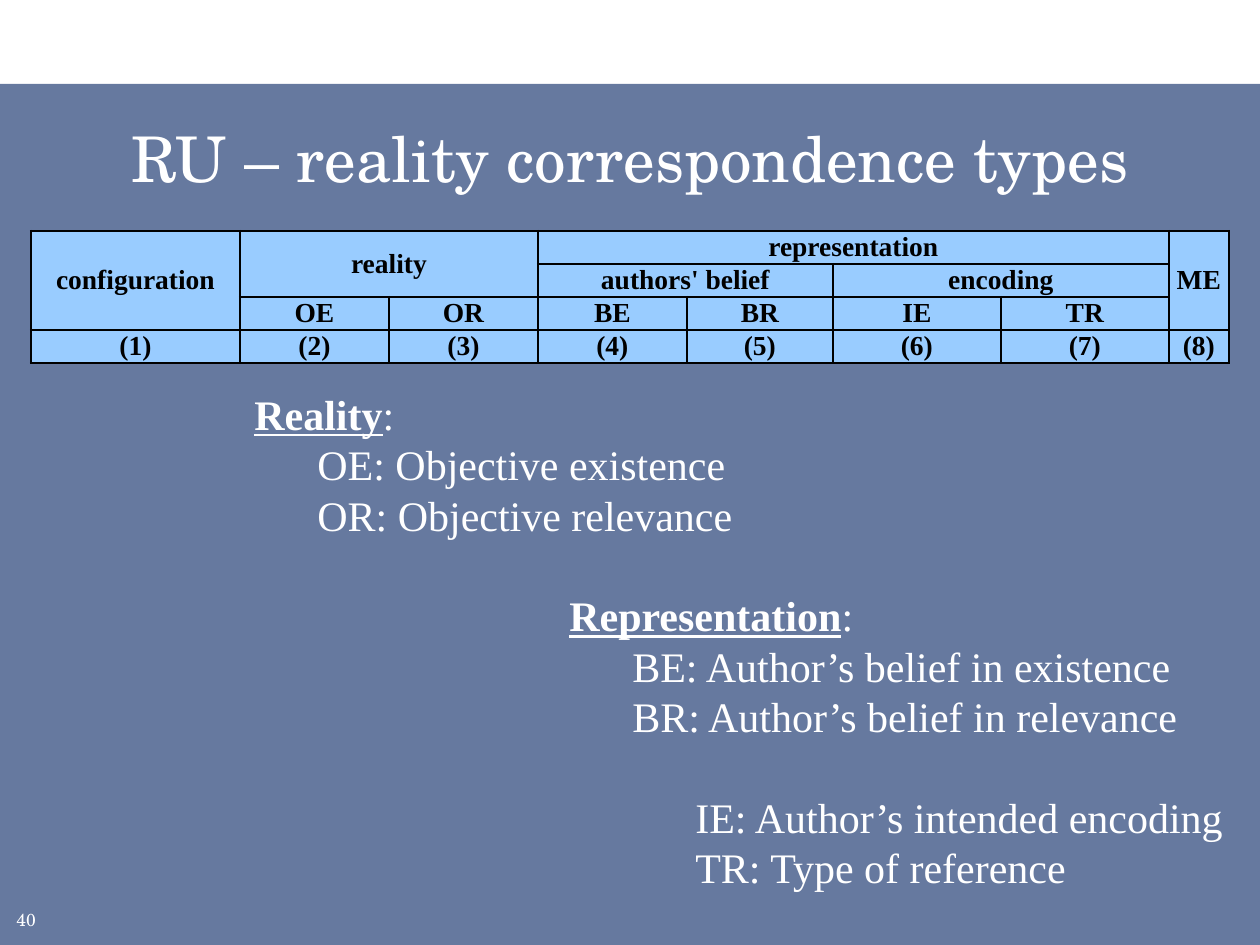
"""Build the slide on RU – reality correspondence types."""
from dataclasses import dataclass

from lxml import etree
from pptx import Presentation
from pptx import util as u
from pptx.dml.color import RGBColor
from pptx.enum import shapes, text
from pptx.oxml.ns import qn


@dataclass(frozen=True)
class Theme:
    navy: RGBColor = RGBColor(0x00, 0x20, 0x60)
    sky: RGBColor = RGBColor(0x99, 0xCC, 0xFF)
    white: RGBColor = RGBColor(0xFF, 0xFF, 0xFF)
    black: RGBColor = RGBColor(0, 0, 0)
    display: str = "TeX Gyre Schola"
    serif: str = "Times New Roman"
    title: float = 36
    body: float = 24
    cell: float = 15.7
    number: float = 10
    leading: float = 28.8


THEME = Theme()


def px(value):
    return u.Emu(round(value * 914400 / 126))


def style(font, name, size, color, bold=False):
    font.name, font.size, font.bold = name, u.Pt(size), bold
    font.color.rgb = color


deck = Presentation()
deck.slide_width, deck.slide_height = px(1260), px(945)
slide = deck.slides.add_slide(deck.slide_layouts[5])

title = slide.shapes.title
title.left, title.top, title.width, title.height = px(31), px(105), px(1198), px(105)
title.text_frame.text = "RU – reality correspondence types"
title.text_frame.vertical_anchor = text.MSO_ANCHOR.MIDDLE
heading = title.text_frame.paragraphs[0]
heading.alignment = text.PP_ALIGN.CENTER
style(heading.runs[0].font, THEME.display, THEME.title, THEME.white)

backdrop = slide.shapes.add_shape(
    shapes.MSO_SHAPE.RECTANGLE, 0, px(84), px(1260), px(861))
backdrop.shadow.inherit = False
backdrop.fill.solid()
backdrop.fill.fore_color.rgb = THEME.navy
backdrop.line.fill.background()
navy = backdrop._element.spPr.find(qn("a:solidFill"))[0]
etree.SubElement(navy, qn("a:alpha"), val="60000")
slide.shapes._spTree.insert(2, backdrop._element)

page = slide.shapes.add_textbox(px(4), px(903), px(59), px(32))
page.text_frame.text = "40"
page.text_frame.word_wrap = True
page.text_frame.vertical_anchor = text.MSO_ANCHOR.MIDDLE
style(page.text_frame.paragraphs[0].runs[0].font,
      THEME.display, THEME.number, THEME.white)

COLUMNS = [209, 149, 149, 149, 146, 168, 168, 60]
ROWS = [
    ["configuration", "reality", "", "representation", "", "", "", "ME"],
    ["", "", "", "authors' belief", "", "encoding", "", ""],
    ["", "OE", "OR", "BE", "BR", "IE", "TR", ""],
    [f"({number})" for number in range(1, 9)],
]
SPANS = [(0, 0, 2, 0), (0, 1, 1, 2), (0, 3, 0, 6), (0, 7, 2, 7),
         (1, 3, 1, 4), (1, 5, 1, 6)]

types = slide.shapes.add_table(
    len(ROWS), len(COLUMNS), px(31), px(231), px(sum(COLUMNS)), px(132)).table
for column, width in zip(types.columns, COLUMNS):
    column.width = px(width)
for row, labels in zip(types.rows, ROWS):
    row.height = px(33)
    for cell, label in zip(row.cells, labels):
        cell.text_frame.text = label
        cell.vertical_anchor = text.MSO_ANCHOR.MIDDLE
        cell.margin_left = cell.margin_right = 0
        cell.margin_top = cell.margin_bottom = 0
        paragraph = cell.text_frame.paragraphs[0]
        paragraph.alignment = text.PP_ALIGN.CENTER
        style(paragraph.font, THEME.serif, THEME.cell, THEME.black, True)
        for run in paragraph.runs:
            style(run.font, THEME.serif, THEME.cell, THEME.black, True)
        properties = cell._tc.get_or_add_tcPr()
        for side in ("a:lnL", "a:lnR", "a:lnT", "a:lnB"):
            border = etree.SubElement(properties, qn(side), w=str(u.Pt(1.5)))
            ink = etree.SubElement(border, qn("a:solidFill"))
            etree.SubElement(ink, qn("a:srgbClr"), val=str(THEME.black))
        cell.fill.solid()
        cell.fill.fore_color.rgb = THEME.sky
for top, left, bottom, right in SPANS:
    types.cell(top, left).merge(types.cell(bottom, right))

GROUPS = [
    ("Reality", 0, 0, ["OE: Objective existence", "OR: Objective relevance"]),
    ("Representation", 5, 315, ["BE: Author’s belief in existence",
                                "BR: Author’s belief in relevance"]),
    ("", 6, 378, ["IE: Author’s intended encoding", "TR: Type of reference"]),
]
lines = []
for name, level, indent, meanings in GROUPS:
    block = [([name, ":"], level, indent)] if name else []
    block += [([meaning], level + 1, indent + 63) for meaning in meanings]
    lines += [(*line, bool(lines) and place == 0) for place, line in enumerate(block)]

legend = slide.shapes.add_textbox(px(242), px(382), px(1018), px(522)).text_frame
legend.word_wrap = True
for place, (parts, level, indent, opens_group) in enumerate(lines):
    paragraph = legend.add_paragraph() if place else legend.paragraphs[0]
    paragraph.level = level
    paragraph._p.get_or_add_pPr().set("marL", str(px(indent)))
    paragraph.line_spacing = u.Pt(THEME.leading)
    if opens_group:
        paragraph.space_before = u.Pt(THEME.leading)
    for part in parts:
        run = paragraph.add_run()
        run.text = part
        is_name = len(parts) == 2 and part != ":"
        style(run.font, THEME.serif, THEME.body, THEME.white, is_name)
        run.font.underline = is_name

deck.save("out.pptx")
